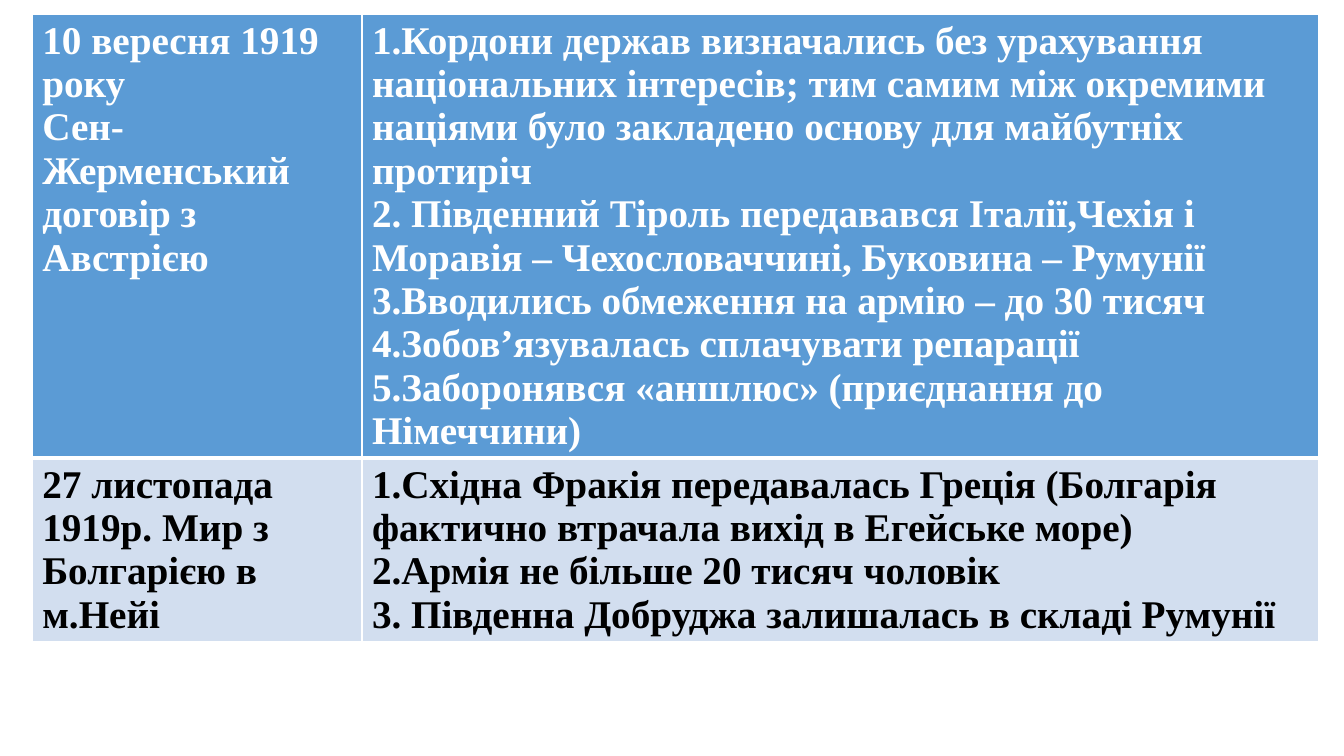
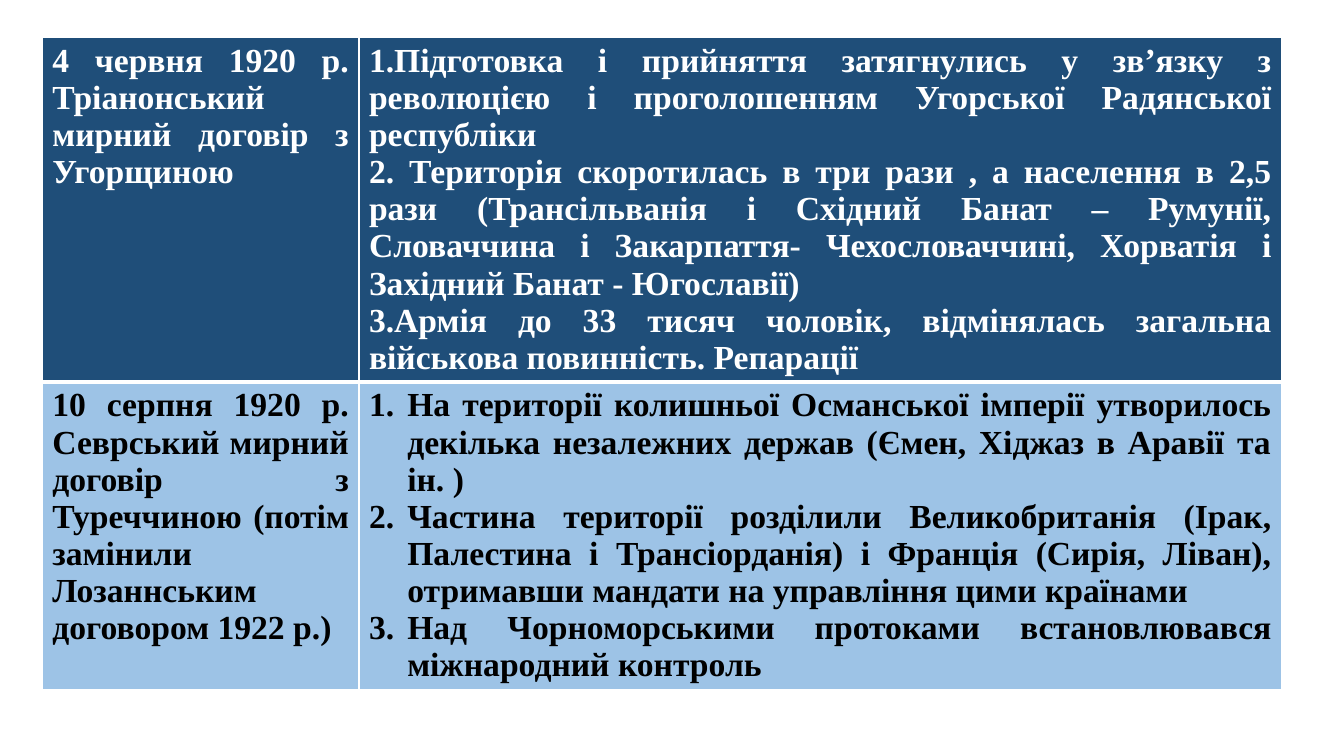
from lxml.etree import SubElement
from pptx import Presentation
from pptx.dml.color import RGBColor
from pptx.enum.text import PP_ALIGN as Align
from pptx.oxml.ns import qn
from pptx.util import Inches, Pt

# Shared style
FONT = "Times New Roman"
WHITE, BLACK = "FFFFFF", "000000"
TEXT_COLORS = (WHITE, BLACK)  # header row, body row
THIN, THICK = Pt(1), Pt(3)
NUMBER_INDENT = Inches(0.38)


def color(hex_value):
    return RGBColor.from_string(hex_value)


def set_border(cell, side, width):
    line = SubElement(cell._tc.get_or_add_tcPr(), qn(f"a:ln{side}"), w=str(width))
    fill = SubElement(line, qn("a:solidFill"))
    SubElement(fill, qn("a:srgbClr"), val=WHITE)


# Content: each cell is a list of paragraphs
treaties = [
    {
        "position": (0.32, 0.14), "columns": (3.27, 9.49), "rows": (4.39, 1.82),
        "fills": ("5B9BD5", "D2DEEF"), "size": 28, "align": Align.LEFT,
        "numbered_cell": None,
        "cells": [
            [["10 вересня 1919 року",
              "Сен-Жерменський договір з Австрією"],
             ["1.Кордони держав визначались без урахування національних інтересів; "
              "тим самим між окремими націями було закладено основу для майбутніх протиріч",
              "2. Південний Тіроль передавався Італії,Чехія і Моравія – Чехословаччині, "
              "Буковина – Румунії",
              "3.Вводились обмеження на армію – до 30 тисяч",
              "4.Зобов’язувалась сплачувати репарації",
              "5.Заборонявся «аншлюс» (приєднання до Німеччини)"]],
            [["27 листопада 1919р. Мир з Болгарією в м.Нейі"],
             ["1.Східна Фракія передавалась Греція (Болгарія фактично втрачала вихід "
              "в Егейське море)",
              "2.Армія не більше 20 тисяч чоловік",
              "3. Південна Добруджа залишалась в складі Румунії"]],
        ],
    },
    {
        "position": (0.42, 0.37), "columns": (3.14, 9.15), "rows": (3.42, 3.04),
        "fills": ("1F4E79", "9DC3E6"), "size": 24, "align": Align.JUSTIFY,
        "numbered_cell": (1, 1),
        "cells": [
            [["4 червня 1920 р. Тріанонський мирний договір з Угорщиною"],
             ["1.Підготовка і прийняття затягнулись у зв’язку з революцією і "
              "проголошенням Угорської Радянської республіки",
              "2. Територія скоротилась в три рази , а населення в 2,5 рази "
              "(Трансільванія і Східний Банат – Румунії, Словаччина і Закарпаття- "
              "Чехословаччині, Хорватія і Західний Банат - Югославії)",
              "3.Армія до 33 тисяч чоловік, відмінялась загальна військова повинність. "
              "Репарації"]],
            [["10 серпня 1920 р. Севрський мирний договір з Туреччиною (потім замінили "
              "Лозаннським договором 1922 р.)"],
             ["На території колишньої Османської імперії утворилось декілька незалежних "
              "держав (Ємен, Хіджаз в Аравії та ін. )",
              "Частина території розділили Великобританія (Ірак, Палестина і "
              "Трансіорданія) і Франція (Сирія, Ліван), отримавши мандати на управління "
              "цими країнами",
              "Над Чорноморськими протоками встановлювався міжнародний контроль"]],
        ],
    },
]

presentation = Presentation()
presentation.slide_width = Inches(13.33)
presentation.slide_height = Inches(7.5)

for treaty in treaties:
    # Table frame
    slide = presentation.slides.add_slide(presentation.slide_layouts[6])
    left, top = treaty["position"]
    columns, rows = treaty["columns"], treaty["rows"]
    table = slide.shapes.add_table(
        len(rows), len(columns), Inches(left), Inches(top),
        Inches(sum(columns)), Inches(sum(rows))).table
    table.horz_banding = False
    for column, width in zip(table.columns, columns):
        column.width = Inches(width)

    for row_index, row_cells in enumerate(treaty["cells"]):
        table.rows[row_index].height = Inches(rows[row_index])
        for column_index, texts in enumerate(row_cells):
            # Borders and fill, with a thick rule under the header row
            cell = table.cell(row_index, column_index)
            header = row_index == 0
            set_border(cell, "L", THIN)
            set_border(cell, "R", THIN)
            set_border(cell, "T", THIN if header else THICK)
            set_border(cell, "B", THICK if header else THIN)
            cell.fill.solid()
            cell.fill.fore_color.rgb = color(treaty["fills"][row_index])

            # Text
            cell.text_frame.text = "\n".join(texts)
            for paragraph in cell.text_frame.paragraphs:
                paragraph.alignment = treaty["align"]
                if (row_index, column_index) == treaty["numbered_cell"]:
                    properties = paragraph._p.get_or_add_pPr()
                    properties.set("marL", str(NUMBER_INDENT))
                    properties.set("indent", str(-NUMBER_INDENT))
                    SubElement(properties, qn("a:buFont"), typeface="+mj-lt")
                    SubElement(properties, qn("a:buAutoNum"), type="arabicPeriod")
                for run in paragraph.runs:
                    run.font.name = FONT
                    run.font.size = Pt(treaty["size"])
                    run.font.bold = True
                    run.font.color.rgb = color(TEXT_COLORS[row_index])

presentation.save("out.pptx")
